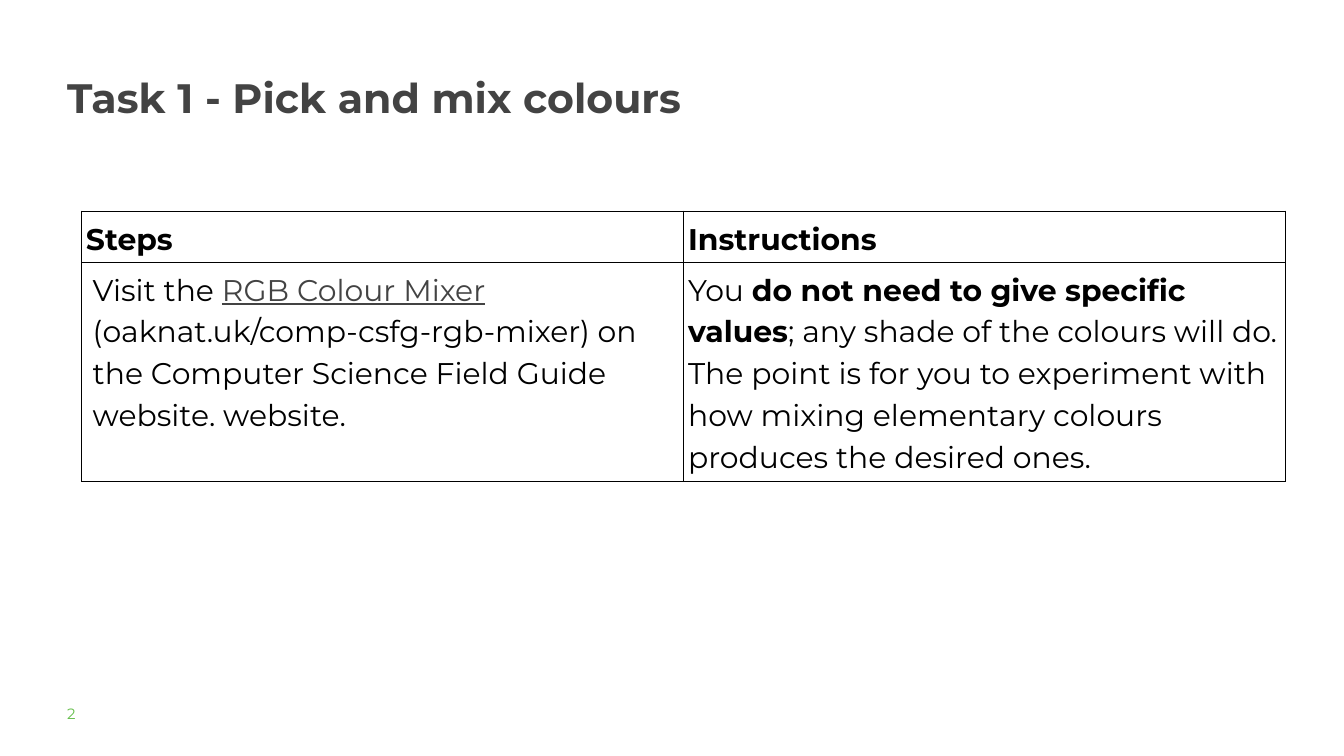
from dataclasses import dataclass

from lxml import etree
from pptx import Presentation
from pptx.dml.color import RGBColor
from pptx.oxml.ns import qn
from pptx.util import Inches, Pt


@dataclass(frozen=True)
class Theme:
    font: str = "Montserrat"
    heading: str = "434343"
    body: str = "000000"
    accent: str = "65BE4B"
    background: str = "FFFFFF"
    title_size: int = 44
    body_size: int = 32
    number_size: int = 16
    line_spacing: float = 1.15
    cell_margin: float = 0.07
    border_widths: tuple = (("lnL", 0.75), ("lnR", 0.75), ("lnT", 1), ("lnB", 1))


class SlideBuilder:
    """Holds the theme and the current slide."""

    def __init__(self, slide, theme):
        self.slide = slide
        self.theme = theme

    def background(self):
        fill = self.slide.background.fill
        fill.solid()
        fill.fore_color.rgb = RGBColor.from_string(self.theme.background)

    def run(self, paragraph, text, size, color, bold=False, underline=False):
        run = paragraph.add_run()
        run.text = text
        font = run.font
        font.name = self.theme.font
        font.size = Pt(size)
        font.bold = bold
        font.underline = underline
        font.color.rgb = RGBColor.from_string(color)

    def text(self, left, top, width, height, text, size, color, bold=False):
        box = self.slide.shapes.add_textbox(
            Inches(left), Inches(top), Inches(width), Inches(height))
        frame = box.text_frame
        frame.word_wrap = True
        frame.margin_left = frame.margin_right = 0
        frame.margin_top = frame.margin_bottom = 0
        paragraph = frame.paragraphs[0]
        paragraph.line_spacing = self.theme.line_spacing if bold else 1
        self.run(paragraph, text, size, color, bold)

    def cell_borders(self, cell):
        properties = cell._tc.get_or_add_tcPr()
        for side, width in self.theme.border_widths:
            line = etree.SubElement(properties, qn(f"a:{side}"), w=str(Pt(width)))
            fill = etree.SubElement(line, qn("a:solidFill"))
            etree.SubElement(fill, qn("a:srgbClr"), val=self.theme.body)

    def cell(self, cell, runs, indent=0):
        margin = Inches(self.theme.cell_margin)
        cell.margin_left = cell.margin_right = margin
        cell.margin_top = cell.margin_bottom = margin
        self.cell_borders(cell)
        cell.fill.background()
        paragraph = cell.text_frame.paragraphs[0]
        paragraph.line_spacing = self.theme.line_spacing
        if indent:
            paragraph._p.get_or_add_pPr().set("marL", str(Inches(indent)))
        for text, style in runs:
            style = {"color": self.theme.body, **style}
            self.run(paragraph, text, self.theme.body_size, **style)

    def table(self, left, top, column_widths, row_heights, rows, indents):
        table = self.slide.shapes.add_table(
            len(row_heights), len(column_widths), Inches(left), Inches(top),
            Inches(sum(column_widths)), Inches(sum(row_heights))).table
        table.first_row = table.horz_banding = False
        for column, width in zip(table.columns, column_widths):
            column.width = Inches(width)
        for row, height, contents, row_indents in zip(
                table.rows, row_heights, rows, indents):
            row.height = Inches(height)
            for cell, runs, indent in zip(row.cells, contents, row_indents):
                self.cell(cell, runs, indent)


def main():
    theme = Theme()
    presentation = Presentation()
    presentation.slide_width = Inches(20)
    presentation.slide_height = Inches(11.25)
    slide = presentation.slides.add_slide(presentation.slide_layouts[6])
    builder = SlideBuilder(slide, theme)
    builder.background()

    # Title
    builder.text(1, 0.97, 16.17, 1.78, "Task 1 - Pick and mix colours",
                 theme.title_size, theme.heading, bold=True)

    # Slide number
    builder.text(1, 10.48, 1.57, 0.39, "2", theme.number_size, theme.accent)

    # Task table
    bold = {"bold": True}
    link = {"color": theme.heading, "underline": True}
    header = [[("Steps", bold)], [("Instructions", bold)]]
    task = [
        [("Visit the ", {}),
         ("RGB Colour Mixer", link),
         (" (oaknat.uk/comp-csfg-rgb-mixer) on the Computer Science "
          "Field Guide website. website.", {})],
        [("You ", {}),
         ("do not need to give specific values", bold),
         ("; any shade of the colours will do. The point is for you to "
          "experiment with how mixing elementary colours produces the "
          "desired ones.", {})],
    ]
    builder.table(1.21, 3.14, [8.96] * 2, [0.76, 3.26], [header, task],
                  indents=[(0, 0), (0.1, 0)])

    presentation.save("out.pptx")


if __name__ == "__main__":
    main()
